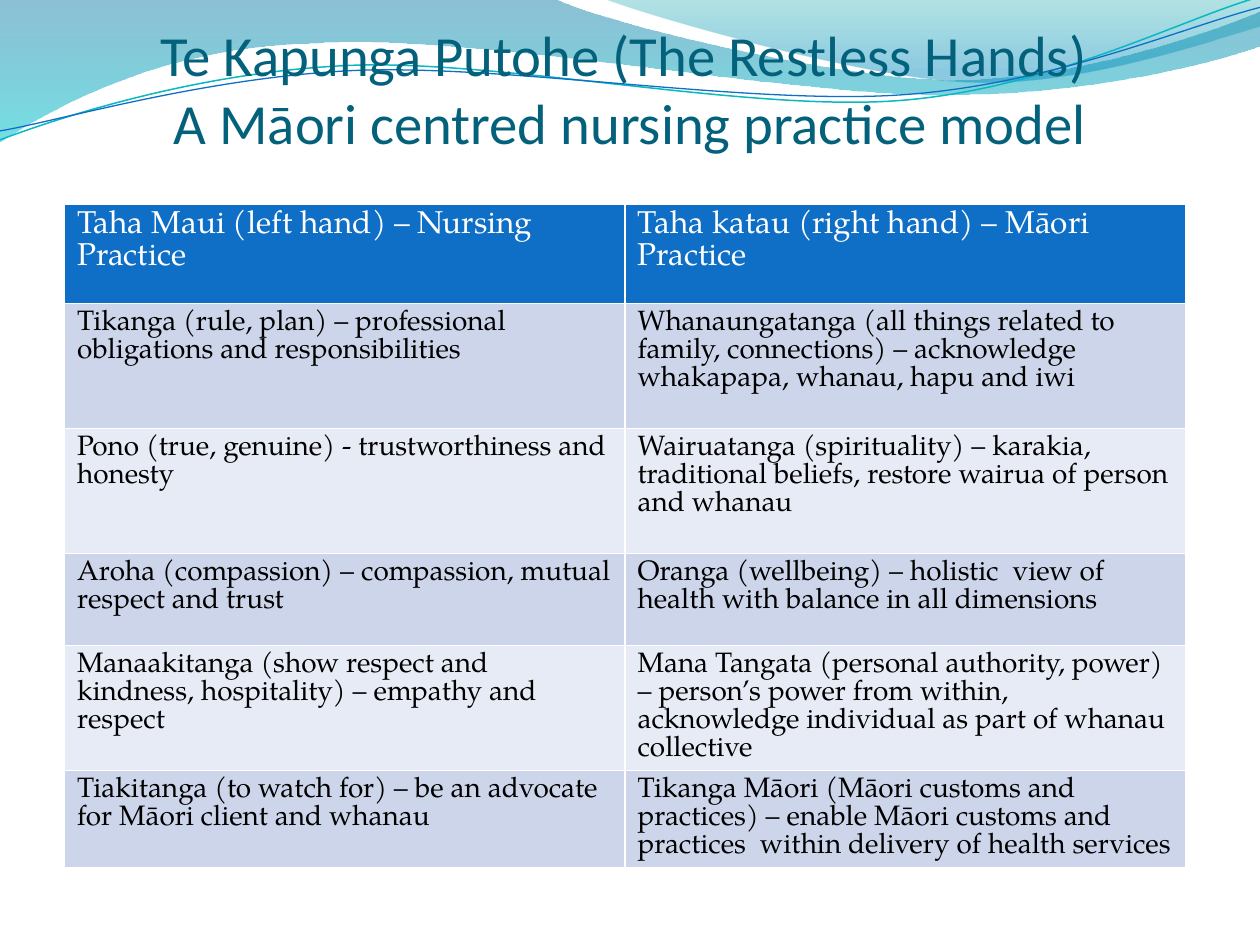
import pptx
import pptx.util
import pptx.dml.color
import pptx.enum.text
import lxml.etree
from pptx.util import Cm

A = "{http://schemas.openxmlformats.org/drawingml/2006/main}"


def colour(text):
    return pptx.dml.color.RGBColor.from_string(text)


def add_wave(page, start, pieces, closed):
    """Draw an outline; a piece is one point (line) or three points (cubic curve)."""
    points = [point for piece in pieces for point in piece]
    builder = page.shapes.build_freeform(Cm(start[0]), Cm(start[1]))
    builder.add_line_segments([(Cm(x), Cm(y)) for x, y in points], close=closed)
    wave = builder.convert_to_shape()
    wave.shadow.inherit = False
    segments = iter(list(wave.element.spPr.iter(A + "lnTo")))
    for piece in pieces:
        lines = [next(segments) for _ in piece]
        if len(lines) == 3:
            curve = lxml.etree.Element(A + "cubicBezTo")
            lines[0].addprevious(curve)
            for line in lines:
                curve.append(line[0])
                line.getparent().remove(line)
    return wave


deck = pptx.Presentation()
deck.slide_width, deck.slide_height = Cm(25.4), Cm(19.05)
page = deck.slides.add_slide(deck.slide_layouts[5])

# Filled waves: start and pieces in cm, gradient stops (position, colour, opacity %)
filled_waves = [
    ((0, 0), [
        [(11.18, -0.03)],
        [(12.09, 0.43), (16.87, 1.6), (19.25, 1.6)],
        [(21.67, 1.6), (24.33, 0.66), (25.4, 0.23)],
        [(25.43, 0.91)],
        [(24.97, 1.12), (22.1, 1.93), (18.95, 1.91)],
        [(15.8, 1.91), (9.7, 0.71), (6.53, 0.86)],
        [(3.28, 0.91), (1.17, 2.11), (-0.03, 2.87)],
        [(0, 0)],
    ], [(0, "0074A1", 45), (1, "00C6CF", 55)]),
    ((12.17, -0.03), [
        [(12.93, 0.28), (17.32, 1.57), (19.53, 1.65)],
        [(21.74, 1.75), (24.41, 0.81), (25.4, 0.53)],
        [(25.4, 0)],
        [(12.17, -0.03)],
    ], [(0, "00A1A9", 30), (0.8, "008BBF", 45)]),
]
for start, pieces, stops in filled_waves:
    wave = add_wave(page, start, pieces, True)
    wave.line.fill.background()
    wave.fill.gradient()
    wave.fill.gradient_angle = 270
    for stop, (position, shade, _) in zip(wave.fill.gradient_stops, stops):
        stop.position = position
        stop.color.rgb = colour(shade)
    for node, (_, _, opacity) in zip(wave.element.spPr.iter(A + "srgbClr"), stops):
        lxml.etree.SubElement(node, A + "alpha", val=str(opacity * 1000))

# Thin curves: start and pieces in cm, colour, width in points
thin_curves = [
    ((0, 2.82), [
        [(1.22, 2.36), (4.01, 1.45), (7.04, 1.32)],
        [(10.03, 1.19), (15.06, 2.26), (18.11, 2.03)],
        [(21.16, 1.8), (23.83, 0.38), (25.35, -0.05)],
    ], "0AB8BF", 0.85),
    ((0, 2.64), [
        [(1.19, 2.44), (4.17, 1.55), (7.19, 1.42)],
        [(10.24, 1.3), (15.16, 2.13), (18.21, 1.91)],
        [(21.23, 1.7), (23.9, 0.53), (25.4, 0.15)],
    ], "0F6FC6", 0.75),
]
for start, pieces, shade, width in thin_curves:
    curve = add_wave(page, start, pieces, False)
    curve.fill.background()
    curve.line.color.rgb = colour(shade)
    curve.line.width = pptx.util.Pt(width)

# Title, in front of the waves
title = page.shapes.title
title.element.getparent().append(title.element)
title.left, title.top, title.width, title.height = Cm(1.27), Cm(0.53), Cm(22.86), Cm(3.99)
frame = title.text_frame
frame.auto_size = pptx.enum.text.MSO_AUTO_SIZE.NONE
frame.vertical_anchor = pptx.enum.text.MSO_ANCHOR.BOTTOM
frame.margin_left = frame.margin_right = 0
frame.margin_top = Cm(0.13)
frame.margin_bottom = Cm(1.38)
para = frame.paragraphs[0]
para.alignment = pptx.enum.text.PP_ALIGN.CENTER
for index, words in enumerate(["Te Kapunga Putohe (The Restless Hands) ",
                               "A Māori centred nursing practice model"]):
    if index:
        para.add_line_break()
    span = para.add_run()
    span.text = words
    span.font.name = "Calibri"
    span.font.size = pptx.util.Pt(32.4)
    span.font.color.rgb = colour("04617B")

# Table of the two hands
rows = [
    ("Taha Maui (left hand) – Nursing Practice",
     "Taha katau (right hand) – Māori Practice"),
    ("Tikanga (rule, plan) – professional obligations and responsibilities",
     "Whanaungatanga (all things related to family, connections) – acknowledge "
     "whakapapa, whanau, hapu and iwi"),
    ("Pono (true, genuine) - trustworthiness and honesty",
     "Wairuatanga (spirituality) – karakia, traditional beliefs, restore wairua "
     "of person and whanau"),
    ("Aroha (compassion) – compassion, mutual respect and trust",
     "Oranga (wellbeing) – holistic  view of health with balance in all dimensions"),
    ("Manaakitanga (show respect and kindness, hospitality) – empathy and respect",
     "Mana Tangata (personal authority, power) – person’s power from within, "
     "acknowledge individual as part of whanau collective"),
    ("Tiakitanga (to watch for) – be an advocate for Māori client and whanau",
     "Tikanga Māori (Māori customs and practices) – enable Māori customs and "
     "practices  within delivery of health services"),
]
heights = [2.0, 2.52, 2.52, 1.85, 1.85, 1.78]
table = page.shapes.add_table(len(rows), 2, Cm(1.3), Cm(4.12), Cm(22.6), Cm(sum(heights))).table
for column in table.columns:
    column.width = Cm(11.3)
for r, (texts, height) in enumerate(zip(rows, heights)):
    table.rows[r].height = Cm(height)
    header = r == 0
    fill = "0F6FC6" if header else ("E7EBF5", "CCD5EA")[r % 2]
    for c, words in enumerate(texts):
        cell = table.cell(r, c)
        cell.fill.solid()
        cell.fill.fore_color.rgb = colour(fill)
        span = cell.text_frame.paragraphs[0].add_run()
        span.text = words
        span.font.name = "TeX Gyre Pagella"
        span.font.size = pptx.util.Pt(18 if header else 16)
        span.font.bold = False
        span.font.color.rgb = colour("FFFFFF" if header else "000000")

deck.save("out.pptx")
